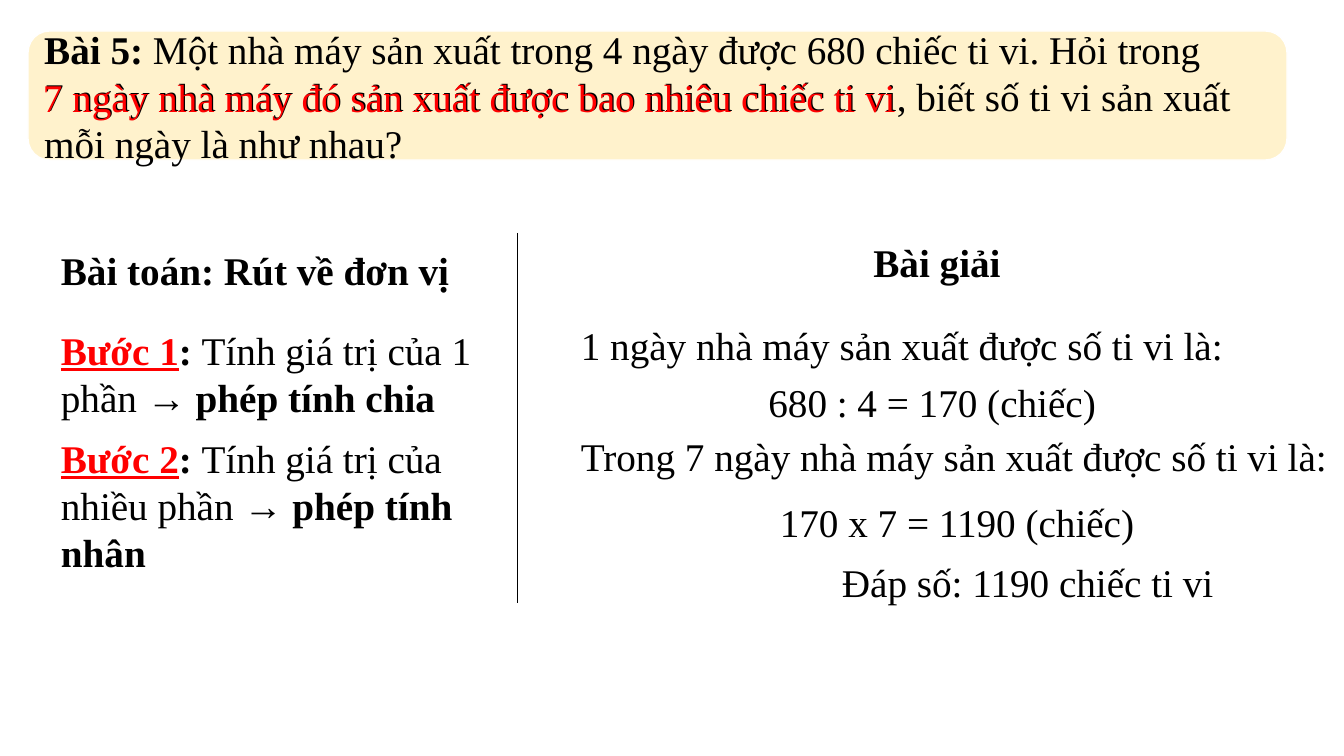
from dataclasses import dataclass

from lxml import etree
from pptx import Presentation, util as u
from pptx.dml.color import RGBColor
from pptx.enum import shapes, text
from pptx.oxml.ns import qn


@dataclass(frozen=True)
class Theme:
    font: str = "Times New Roman"
    size: int = 28
    ink: str = "000000"
    accent: str = "FF0000"
    banner: str = "FFF2CC"
    paper: str = "FFFFFF"


theme = Theme()
LEFT, CENTER = text.PP_ALIGN.LEFT, text.PP_ALIGN.CENTER
LINE_HEIGHT = 57


def px(count):
    return u.Emu(round(count * 914400 / 100.8))


def write(frame, paragraphs, align=LEFT):
    for index, pieces in enumerate(paragraphs):
        paragraph = frame.add_paragraph() if index else frame.paragraphs[0]
        paragraph.alignment = align
        for words, style in pieces:
            run = paragraph.add_run()
            run.text = words
            run.font.name = theme.font
            run.font.size = u.Pt(theme.size)
            run.font.bold = "bold" in style
            run.font.underline = "underline" in style
            color = theme.accent if "accent" in style else theme.ink
            run.font.color.rgb = RGBColor.from_string(color)


deck = Presentation()
deck.slide_width, deck.slide_height = px(1344), px(756)
slide = deck.slides.add_slide(deck.slide_layouts[6])

problem = slide.shapes.add_shape(
    shapes.MSO_SHAPE.ROUNDED_RECTANGLE, px(28), px(31), px(1259), px(129))
problem.shadow.inherit = False
problem.fill.solid()
problem.fill.fore_color.rgb = RGBColor.from_string(theme.banner)
problem.line.color.rgb = RGBColor.from_string(theme.paper)
problem.line.width = u.Pt(1)
problem.text_frame.word_wrap = True
problem.text_frame.vertical_anchor = text.MSO_ANCHOR.MIDDLE
question = "7 ngày nhà máy đó sản xuất được bao nhiêu chiếc ti vi"
write(problem.text_frame, [
    [("Bài 5: ", "bold"),
     ("Một nhà máy sản xuất trong 4 ngày được 680 chiếc ti vi. Hỏi trong", "")],
    [(question + ", biết số ti vi sản xuất mỗi ngày là như nhau?", "")],
])

method_left, method_width = 51, 467
steps = [
    (321, 105, "Bước 1", "Tính giá trị của 1 phần ", "→ phép tính chia"),
    (429, 152, "Bước 2", "Tính giá trị của nhiều phần ", "→ phép tính nhân"),
]
passages = [
    (method_left, top, method_width, height, LEFT, True,
     [(step, "bold underline accent"), (": ", "bold"), (task, ""), (operation, "bold")])
    for top, height, step, task, operation in steps
]
single_lines = [
    (method_left, 241, 519, LEFT, True, "Bài toán: Rút về đơn vị", "bold"),
    (739, 233, 396, CENTER, True, "Bài giải", "bold"),
    (571, 316, 685, LEFT, True, "1 ngày nhà máy sản xuất được số ti vi là:", ""),
    (638, 373, 598, CENTER, True, "680 : 4 = 170 (chiếc) ", ""),
    (571, 427, 774, LEFT, True, "Trong 7 ngày nhà máy sản xuất được số ti vi là:", ""),
    (658, 493, 598, CENTER, True, "170 x 7 = 1190 (chiếc)", ""),
    (830, 553, 405, CENTER, False, "Đáp số: 1190 chiếc ti vi ", ""),
    (33, 68, 881, LEFT, False, question, "accent"),
]
passages += [
    (left, top, width, LINE_HEIGHT, align, wrap, [(words, style)])
    for left, top, width, align, wrap, words, style in single_lines
]
for left, top, width, height, align, wrap, pieces in passages:
    passage = slide.shapes.add_textbox(px(left), px(top), px(width), px(height))
    passage.text_frame.word_wrap = wrap
    passage.text_frame.auto_size = text.MSO_AUTO_SIZE.SHAPE_TO_FIT_TEXT
    write(passage.text_frame, [pieces], align)

divider = slide.shapes.add_connector(
    shapes.MSO_CONNECTOR.STRAIGHT, px(517), px(233), px(517), px(603))
divider.line.color.rgb = RGBColor.from_string(theme.ink)
divider.line.width = u.Pt(0.5)
etree.SubElement(divider._element.spPr, qn("a:effectLst"))

deck.save("out.pptx")
